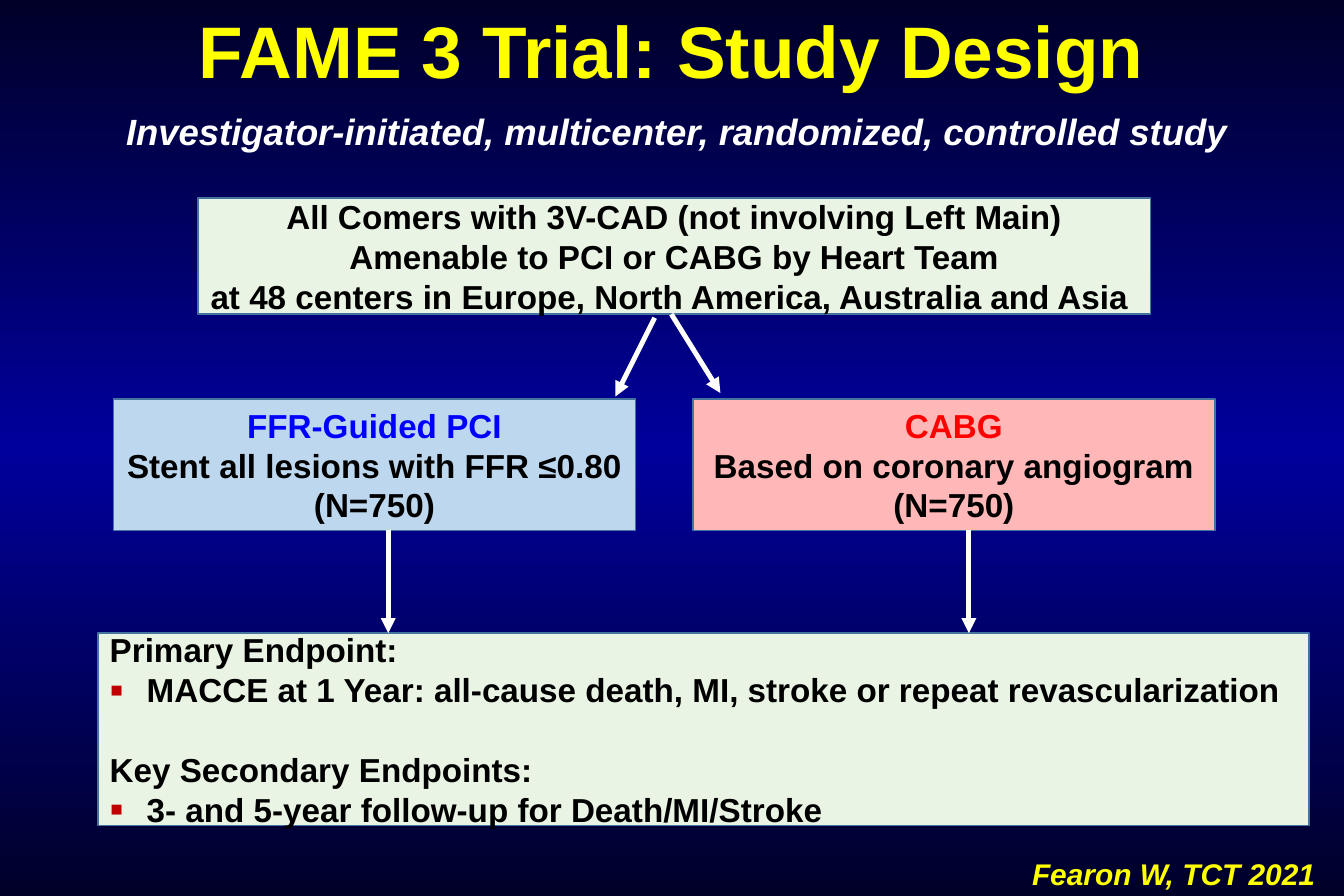
from copy import deepcopy

from lxml import etree
from pptx import Presentation
from pptx.dml.color import RGBColor
from pptx.enum.shapes import MSO_CONNECTOR, MSO_SHAPE
from pptx.enum.text import MSO_ANCHOR, MSO_AUTO_SIZE, PP_ALIGN
from pptx.oxml.ns import qn
from pptx.util import Emu, Pt

RECTANGLE = MSO_SHAPE.RECTANGLE
STRAIGHT = MSO_CONNECTOR.STRAIGHT
TOP, MIDDLE = MSO_ANCHOR.TOP, MSO_ANCHOR.MIDDLE
LEFT, CENTER = PP_ALIGN.LEFT, PP_ALIGN.CENTER
FIXED = MSO_AUTO_SIZE.NONE
TITLE_ONLY = 5

YELLOW, WHITE, BLACK = "FFFF00", "FFFFFF", "000000"
BLUE, RED, DARK_RED = "0000FF", "FF0000", "C00000"
GREEN_FILL, BLUE_FILL, RED_FILL = "EAF4E4", "BDD7EE", "FFB7B7"
BORDER = "43739E"
NIGHT, ROYAL = "000028", "00009C"


def px(length):
    return Emu(length * 9144)


def rgb(value):
    return RGBColor.from_string(value)


class StudySlide:
    font = "Arial"
    body_size = 20

    def __init__(self, presentation):
        self.slide = presentation.slides.add_slide(
            presentation.slide_layouts[TITLE_ONLY])

    def background(self, colors):
        fill = self.slide.background.fill
        fill.gradient()
        fill.gradient_angle = 270
        first = fill.gradient_stops[0]._gs
        first.addnext(deepcopy(first))
        for index, (stop, color) in enumerate(zip(fill.gradient_stops, colors)):
            stop.position = index / (len(colors) - 1)
            stop.color.rgb = rgb(color)

    def style(self, paragraph, size, color, align, italic=False):
        paragraph.alignment = align
        font = paragraph.font
        font.name, font.size = self.font, Pt(size)
        font.bold, font.italic = True, italic
        font.color.rgb = rgb(color)

    def frame(self, shape, anchor):
        frame = shape.text_frame
        frame.word_wrap = True
        frame.auto_size = FIXED
        frame.vertical_anchor = anchor
        return frame

    def title(self, text, x, y, width, height):
        heading = self.slide.shapes.title
        heading.left, heading.top = px(x), px(y)
        heading.width, heading.height = px(width), px(height)
        frame = self.frame(heading, TOP)
        frame.text = text
        self.style(frame.paragraphs[0], 44, YELLOW, CENTER)

    def caption(self, text, x, y, width, height, size, color, align):
        box = self.slide.shapes.add_textbox(px(x), px(y), px(width), px(height))
        frame = self.frame(box, TOP)
        frame.text = text
        self.style(frame.paragraphs[0], size, color, align, italic=True)

    def panel(self, x, y, width, height, fill, lines, heading_color=BLACK):
        box = self.slide.shapes.add_shape(
            RECTANGLE, px(x), px(y), px(width), px(height))
        box.shadow.inherit = False
        box.fill.solid()
        box.fill.fore_color.rgb = rgb(fill)
        box.line.color.rgb = rgb(BORDER)
        box.line.width = Pt(1)
        frame = self.frame(box, MIDDLE)
        frame.text = "\n".join(lines)
        for index, paragraph in enumerate(frame.paragraphs):
            color = BLACK if index else heading_color
            self.style(paragraph, self.body_size, color, CENTER)
        return frame.paragraphs

    def bullet(self, paragraph):
        properties = paragraph._p.get_or_add_pPr()
        properties.set("marL", str(px(31)))
        properties.set("indent", str(-px(31)))
        marks = []
        color = etree.Element(qn("a:buClr"))
        etree.SubElement(color, qn("a:srgbClr"), val=DARK_RED)
        marks.append(color)
        marks.append(etree.Element(qn("a:buSzPct"), val="120000"))
        marks.append(etree.Element(qn("a:buFont"), typeface=self.font))
        marks.append(etree.Element(qn("a:buChar"), char="▪"))
        for position, mark in enumerate(marks):
            properties.insert(position, mark)

    def endpoints(self, x, y, width, height, groups):
        lines = [line for group in groups for line in group]
        headings = [group[0] for group in groups]
        paragraphs = self.panel(x, y, width, height, GREEN_FILL, lines)
        for index, paragraph in enumerate(paragraphs):
            paragraph.alignment = LEFT
            if paragraph.text not in headings:
                paragraph.space_before = Pt(0)
                self.bullet_after_spacing(paragraph)
            elif index:
                paragraph.space_before = Pt(24)

    def bullet_after_spacing(self, paragraph):
        paragraph.space_before = None
        self.bullet(paragraph)

    def arrow(self, start, end):
        arrow = self.slide.shapes.add_connector(
            STRAIGHT, *map(px, start), *map(px, end))
        arrow.line.color.rgb = rgb(WHITE)
        arrow.line.width = Pt(3)
        etree.SubElement(arrow.line._get_or_add_ln(), qn("a:tailEnd"),
                         type="triangle")
        etree.SubElement(arrow._element.spPr, qn("a:effectLst"))


def main():
    presentation = Presentation()
    presentation.slide_width, presentation.slide_height = px(1125), px(750)
    design = StudySlide(presentation)
    design.background([NIGHT, ROYAL, NIGHT])
    design.caption("Fearon W, TCT 2021", 854, 711, 271, 40, 18, YELLOW, LEFT)
    design.title("FAME 3 Trial: Study Design", 0, 0, 1125, 84)
    design.caption(
        "Investigator-initiated, multicenter, randomized, controlled study",
        67, 86, 999, 47, 22, WHITE, CENTER)
    design.panel(166, 166, 797, 97, GREEN_FILL, [
        "All Comers with 3V-CAD (not involving Left Main)",
        "Amenable to PCI or CABG by Heart Team",
        "at 48 centers in Europe, North America, Australia and Asia "])

    arms = [
        (95, BLUE_FILL, BLUE, "FFR-Guided PCI",
         "Stent all lesions with FFR ≤0.80"),
        (580, RED_FILL, RED, "CABG", "Based on coronary angiogram")]
    for x, fill, color, treatment, basis in arms:
        design.panel(x, 334, 437, 110, fill,
                     [treatment, basis, "(N=750)"], color)

    design.endpoints(82, 530, 1014, 161, [
        ["Primary Endpoint:",
         "MACCE at 1 Year: all-cause death, MI, stroke or repeat "
         "revascularization"],
        ["Key Secondary Endpoints:",
         "3- and 5-year follow-up for Death/MI/Stroke"]])

    design.arrow((548, 266), (515, 332))
    design.arrow((562, 263), (603, 329))
    for x in (325, 811):
        design.arrow((x, 444), (x, 530))
    presentation.save("out.pptx")


if __name__ == "__main__":
    main()
